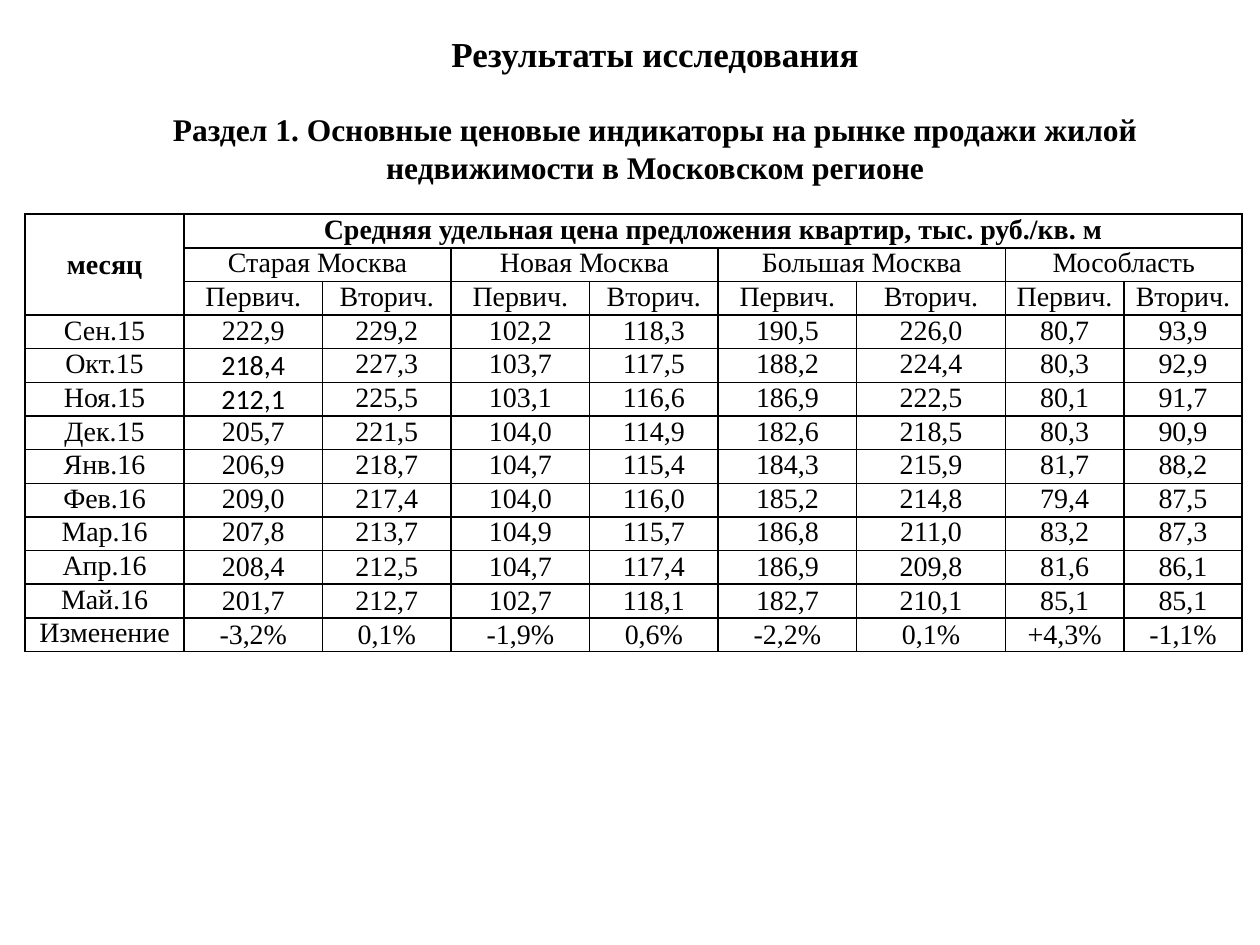
import pptx
import pptx.util
import pptx.dml.color
import pptx.enum.text
import pptx.oxml.ns
import lxml.etree

# Content
HEADING = "Результаты исследования"
SECTION = ("Раздел 1. Основные ценовые индикаторы на рынке продажи жилой "
           "недвижимости в Московском регионе")
MONTH_HEADER = "месяц"
PRICE_HEADER = "Средняя удельная цена предложения квартир, тыс. руб./кв. м"
REGIONS = ["Старая Москва", "Новая Москва", "Большая Москва", "Мособласть"]
MARKETS = ["Первич.", "Вторич."]
PRICES = [
    ("Сен.15", "222,9", "229,2", "102,2", "118,3", "190,5", "226,0", "80,7", "93,9"),
    ("Окт.15", "218,4", "227,3", "103,7", "117,5", "188,2", "224,4", "80,3", "92,9"),
    ("Ноя.15", "212,1", "225,5", "103,1", "116,6", "186,9", "222,5", "80,1", "91,7"),
    ("Дек.15", "205,7", "221,5", "104,0", "114,9", "182,6", "218,5", "80,3", "90,9"),
    ("Янв.16", "206,9", "218,7", "104,7", "115,4", "184,3", "215,9", "81,7", "88,2"),
    ("Фев.16", "209,0", "217,4", "104,0", "116,0", "185,2", "214,8", "79,4", "87,5"),
    ("Мар.16", "207,8", "213,7", "104,9", "115,7", "186,8", "211,0", "83,2", "87,3"),
    ("Апр.16", "208,4", "212,5", "104,7", "117,4", "186,9", "209,8", "81,6", "86,1"),
    ("Май.16", "201,7", "212,7", "102,7", "118,1", "182,7", "210,1", "85,1", "85,1"),
    ("Изменение", "-3,2%", "0,1%", "-1,9%", "0,6%", "-2,2%", "0,1%", "+4,3%", "-1,1%"),
]
CALIBRI_MONTHS = ("Окт.15", "Ноя.15")  # first price of these months

# Layout
COLUMN_WIDTHS = [1.26, 1.1, 1.02, 1.1, 1.02, 1.1, 1.18, 0.94, 0.94]
HEADER_ROWS, HEADER_HEIGHT, PRICE_HEIGHT = 3, 0.25, 0.22
MIDDLE_FROM = HEADER_ROWS + 7  # rows from April on are centred vertically
FONT = "Times New Roman"
BLACK = "000000"
inches = pptx.util.Inches
points = pptx.util.Pt
MIDDLE = pptx.enum.text.MSO_ANCHOR.MIDDLE
TOP = pptx.enum.text.MSO_ANCHOR.TOP


def color(value):
    return pptx.dml.color.RGBColor.from_string(value)


def add_text(paragraph, text, size, bold=False, font=FONT):
    paragraph.alignment = pptx.enum.text.PP_ALIGN.CENTER
    run = paragraph.add_run()
    run.text = text
    run.font.size = points(size)
    run.font.bold = bold
    run.font.name = font
    run.font.color.rgb = color(BLACK)


def add_borders(cell):
    properties = cell._tc.get_or_add_tcPr()
    qualified = pptx.oxml.ns.qn
    for side in ("a:lnL", "a:lnR", "a:lnT", "a:lnB"):
        line = lxml.etree.SubElement(properties, qualified(side), w=str(points(1)))
        fill = lxml.etree.SubElement(line, qualified("a:solidFill"))
        lxml.etree.SubElement(fill, qualified("a:srgbClr"), val=BLACK)


def write(cell, text, bold=False, font=FONT, anchor=TOP):
    cell.vertical_anchor = anchor
    add_text(cell.text_frame.paragraphs[0], text, 16, bold, font)


presentation = pptx.Presentation()
presentation.slide_width, presentation.slide_height = inches(10), inches(7.5)
slide = presentation.slides.add_slide(presentation.slide_layouts[5])

# Title
title = slide.shapes.title
title.left, title.top, title.width, title.height = map(inches, (0.75, 0.19, 8.9, 1.35))
frame = title.text_frame
frame.word_wrap = True
frame.auto_size = pptx.enum.text.MSO_AUTO_SIZE.SHAPE_TO_FIT_TEXT
frame.vertical_anchor = MIDDLE
add_text(frame.paragraphs[0], HEADING, 20, bold=True)
section = frame.add_paragraph()
section.space_before = points(20.7)
add_text(section, SECTION, 18, bold=True)

# Table grid
row_heights = [HEADER_HEIGHT] * HEADER_ROWS + [PRICE_HEIGHT] * len(PRICES)
graphic = slide.shapes.add_table(
    len(row_heights), len(COLUMN_WIDTHS), inches(0.2), inches(1.7),
    inches(sum(COLUMN_WIDTHS)), inches(sum(row_heights)))
table = graphic.table
table.first_row = table.horz_banding = False
for column, width in zip(table.columns, COLUMN_WIDTHS):
    column.width = inches(width)
for row, height in zip(table.rows, row_heights):
    row.height = inches(height)
for cell in table.iter_cells():
    add_borders(cell)
    cell.fill.background()
    cell.margin_left = cell.margin_right = inches(0.07)
    cell.margin_top = cell.margin_bottom = 0

# Header rows
table.cell(0, 0).merge(table.cell(HEADER_ROWS - 1, 0))
table.cell(0, 1).merge(table.cell(0, len(COLUMN_WIDTHS) - 1))
write(table.cell(0, 0), MONTH_HEADER, bold=True, anchor=MIDDLE)
write(table.cell(0, 1), PRICE_HEADER, bold=True)
for index, region in enumerate(REGIONS):
    first = 1 + index * len(MARKETS)
    table.cell(1, first).merge(table.cell(1, first + len(MARKETS) - 1))
    write(table.cell(1, first), region)
    for offset, market in enumerate(MARKETS):
        write(table.cell(2, first + offset), market)

# Price rows
for row, values in enumerate(PRICES, HEADER_ROWS):
    for column, value in enumerate(values):
        calibri = column == 1 and values[0] in CALIBRI_MONTHS
        write(table.cell(row, column), value,
              font="Calibri" if calibri else FONT,
              anchor=MIDDLE if column and row >= MIDDLE_FROM else TOP)

presentation.save("out.pptx")
